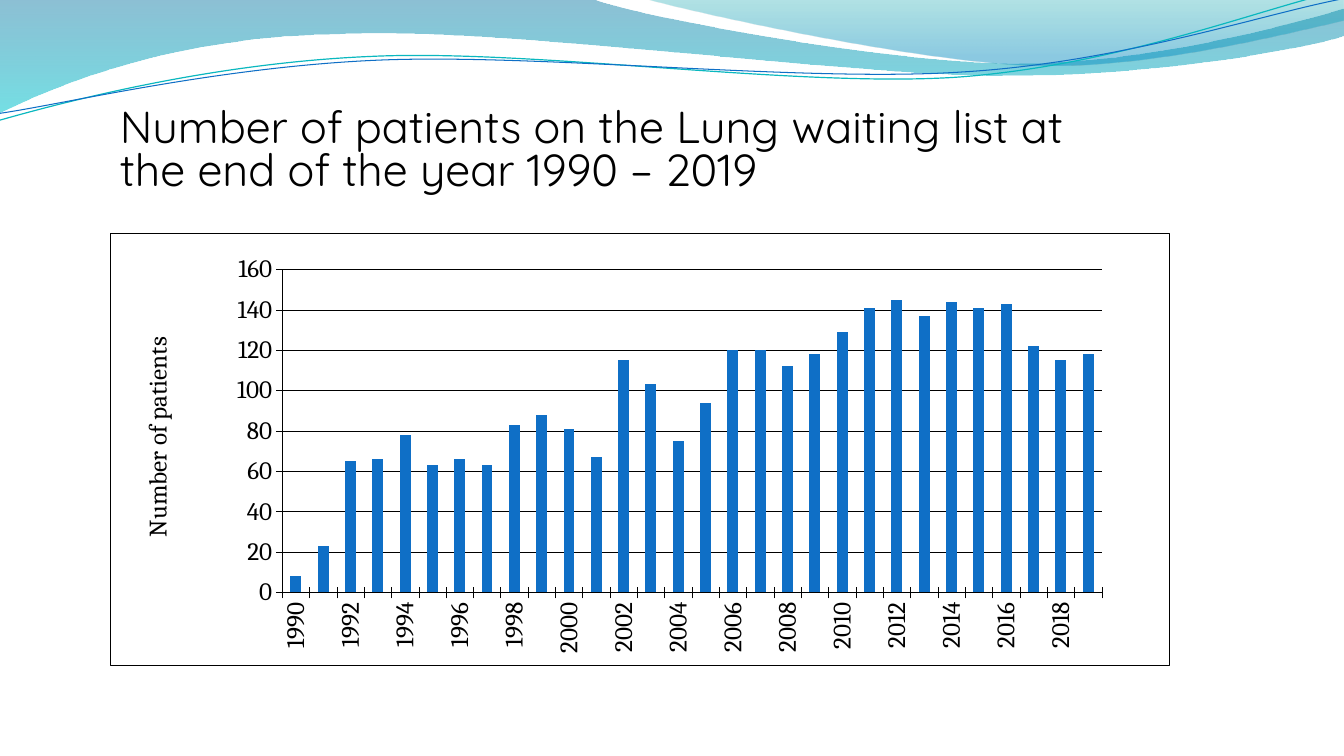
from pptx import Presentation
from pptx.chart.data import CategoryChartData
from pptx.dml.color import RGBColor
from pptx.enum.chart import XL_CHART_TYPE, XL_TICK_MARK
from pptx.oxml import parse_xml
from pptx.oxml.ns import nsdecls, qn
from pptx.util import Pt

PX = 9144
STACKED = XL_CHART_TYPE.COLUMN_STACKED
CROSS = XL_TICK_MARK.CROSS
NO_TICK = XL_TICK_MARK.NONE
BLACK = "000000"
BLUE = "0F6FC6"


def color(value):
    return RGBColor.from_string(value)


def add_outline(slide, start, segments, close):
    builder = slide.shapes.build_freeform(*start, scale=PX)
    builder.add_line_segments([point for segment in segments for point in segment], close=close)
    shape = builder.convert_to_shape()
    shape.shadow.inherit = False
    lines = iter(list(shape.element.iter(qn("a:lnTo"))))
    for segment in segments:
        first = next(lines)
        if len(segment) == 3:
            curve = parse_xml(f'<a:cubicBezTo {nsdecls("a")}/>')
            first.addprevious(curve)
            for line in (first, next(lines), next(lines)):
                curve.append(line[0])
                line.getparent().remove(line)
    return shape


presentation = Presentation()
presentation.slide_width = 750 * PX * 16 // 9
presentation.slide_height = 750 * PX
slide = presentation.slides.add_slide(presentation.slide_layouts[6])

bands = [
    ((0, 0), [
        [(587, -1)],
        [(634, 17), (884, 63), (1011, 63)],
        [(1137, 63), (1277, 26), (1333, 9)],
        [(1334, 36)],
        [(1311, 44), (1159, 76), (994, 75)],
        [(829, 75), (509, 28), (343, 34)],
        [(172, 36), (61, 83), (-2, 113)],
    ], [(0, "0074A1", 45), (1, "00C6CF", 55)]),
    ((638, -1), [
        [(679, 11), (909, 62), (1025, 65)],
        [(1140, 69), (1282, 32), (1333, 21)],
        [(1333, 0)],
    ], [(0, "00A1A9", 30), (0.8, "008BBF", 45)]),
]
for start, segments, stops in bands:
    band = add_outline(slide, start, segments, True)
    band.line.fill.background()
    band.fill.gradient()
    band.fill.gradient_angle = 270
    for gradient_stop, (position, value, _) in zip(band.fill.gradient_stops, stops):
        gradient_stop.position = position
        gradient_stop.color.rgb = color(value)
    stop_colors = band.element.spPr.iter(qn("a:srgbClr"))
    for stop_color, (_, _, opacity) in zip(stop_colors, stops):
        stop_color.append(parse_xml(f'<a:alpha {nsdecls("a")} val="{opacity * 1000}"/>'))

waves = [
    ((-3, 88), [
        [(61, 73), (210, 41), (369, 42)],
        [(528, 42), (788, 93), (948, 90)],
        [(1109, 86), (1253, 36), (1333, 22)],
    ], "0AB8BF", 0.85),
    ((-2, 81), [
        [(61, 75), (218, 45), (377, 46)],
        [(538, 47), (795, 88), (954, 85)],
        [(1113, 83), (1256, 41), (1336, 30)],
    ], BLUE, 0.75),
]
for start, segments, value, width in waves:
    wave = add_outline(slide, start, segments, False)
    wave.rotation = 357.3
    wave.fill.background()
    wave.line.color.rgb = color(value)
    wave.line.width = Pt(width)

title = slide.shapes.add_textbox(109 * PX, 103 * PX, 995 * PX, 106 * PX)
title.text_frame.word_wrap = True
title.text_frame.text = "Number of patients on the Lung waiting list at the end of the year 1990 – 2019"
paragraph = title.text_frame.paragraphs[0]
paragraph.line_spacing = 0.8
font = paragraph.runs[0].font
font.name = "Quicksand"
font.size = Pt(32)
font.color.rgb = color(BLACK)

chart_data = CategoryChartData()
chart_data.categories = [str(year) for year in range(1990, 2020)]
chart_data.add_series("Series 1", [
    8, 23, 65, 66, 78, 63, 66, 63, 83, 88,
    81, 67, 115, 103, 75, 94, 120, 120, 112, 118,
    129, 141, 145, 137, 144, 141, 143, 122, 115, 118,
])
chart = slide.shapes.add_chart(STACKED, 109 * PX, 231 * PX, 1052 * PX, 430 * PX, chart_data).chart
chart.has_legend = False
chart.has_title = False
plot = chart.plots[0]
plot.vary_by_categories = False
plot.gap_width = 150
plot.overlap = 100
bars = plot.series[0].format.fill
bars.solid()
bars.fore_color.rgb = color(BLUE)

years = chart.category_axis
patients = chart.value_axis
patients.minimum_scale = 0
patients.maximum_scale = 160
patients.major_unit = 20
patients.has_major_gridlines = True
axis_title = patients.axis_title
axis_title.text_frame.text = "Number of patients"
title_font = axis_title.text_frame.paragraphs[0].runs[0].font
title_font.bold = False

for axis in (years, patients):
    axis.major_tick_mark = CROSS
    axis.minor_tick_mark = NO_TICK
for line in (years.format.line, patients.format.line, patients.major_gridlines.format.line):
    line.color.rgb = color(BLACK)
    line.width = Pt(0.25)
for font in (chart.font, years.tick_labels.font, patients.tick_labels.font, title_font):
    font.name = "Cambria"
    font.size = Pt(18)
    font.color.rgb = color(BLACK)

chart_space = chart.element
year_axis = chart_space.find(".//" + qn("c:catAx"))
value_title = chart_space.find(".//" + qn("c:valAx") + "/" + qn("c:title"))
year_labels = year_axis.find(qn("c:txPr"))
for rotated_text in (year_labels, value_title):
    body = rotated_text.find(".//" + qn("a:bodyPr"))
    body.set("rot", "-5400000")
    body.set("vert", "horz")
year_axis.find(qn("c:noMultiLvlLbl")).addprevious(
    parse_xml(f'<c:tickLblSkip {nsdecls("c")} val="2"/>'))

plot_area = chart_space.find(".//" + qn("c:plotArea"))
for parent in (plot_area, value_title):
    for layout in parent.findall(qn("c:layout")):
        parent.remove(layout)
plot_area.insert(0, parse_xml(
    f'<c:layout {nsdecls("c")}><c:manualLayout><c:layoutTarget val="inner"/>'
    '<c:xMode val="edge"/><c:yMode val="edge"/><c:x val="0.162"/><c:y val="0.083"/>'
    '<c:w val="0.774"/><c:h val="0.748"/></c:manualLayout></c:layout>'))
value_title.find(qn("c:tx")).addnext(parse_xml(
    f'<c:layout {nsdecls("c")}><c:manualLayout><c:xMode val="edge"/><c:yMode val="edge"/>'
    '<c:x val="0.024"/><c:y val="0.23"/></c:manualLayout></c:layout>'))
chart_space.find(qn("c:txPr")).addprevious(parse_xml(
    f'<c:spPr {nsdecls("c", "a")}><a:noFill/><a:ln w="12192"><a:solidFill>'
    f'<a:srgbClr val="{BLACK}"/></a:solidFill></a:ln></c:spPr>'))

presentation.save("out.pptx")
